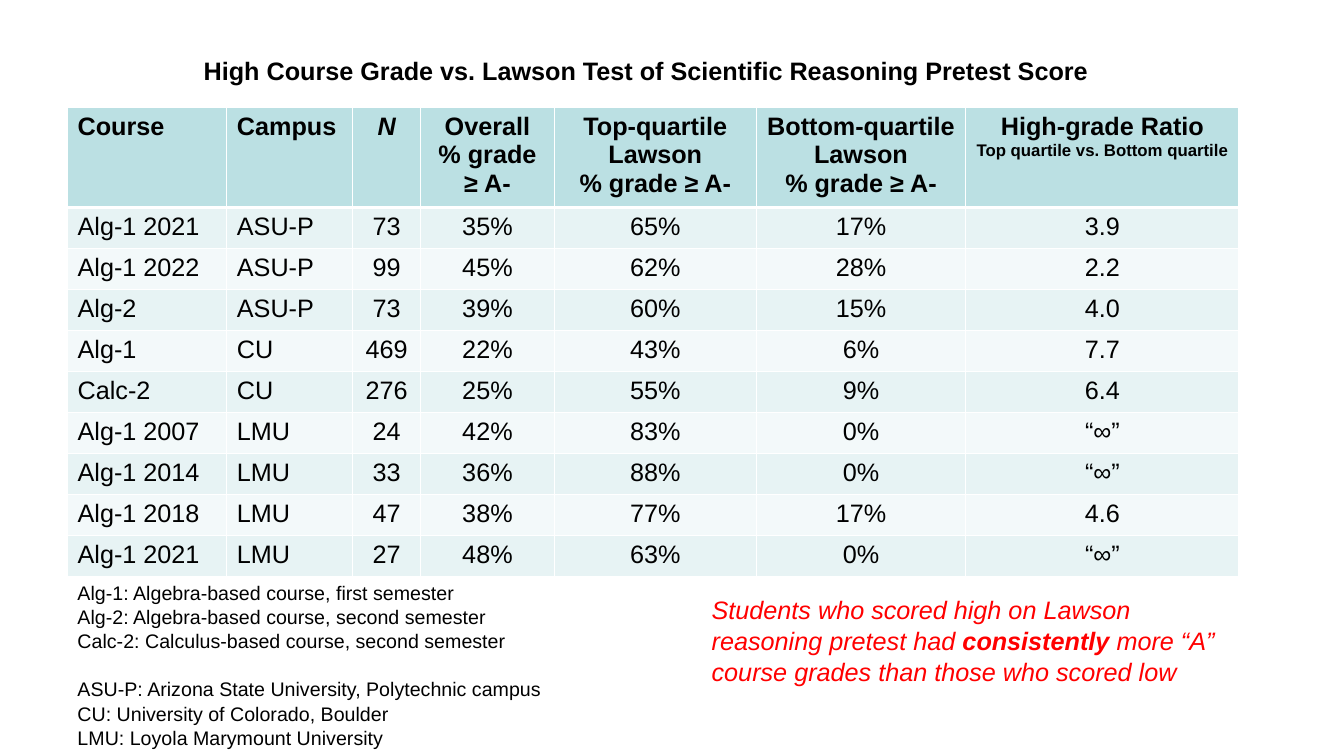
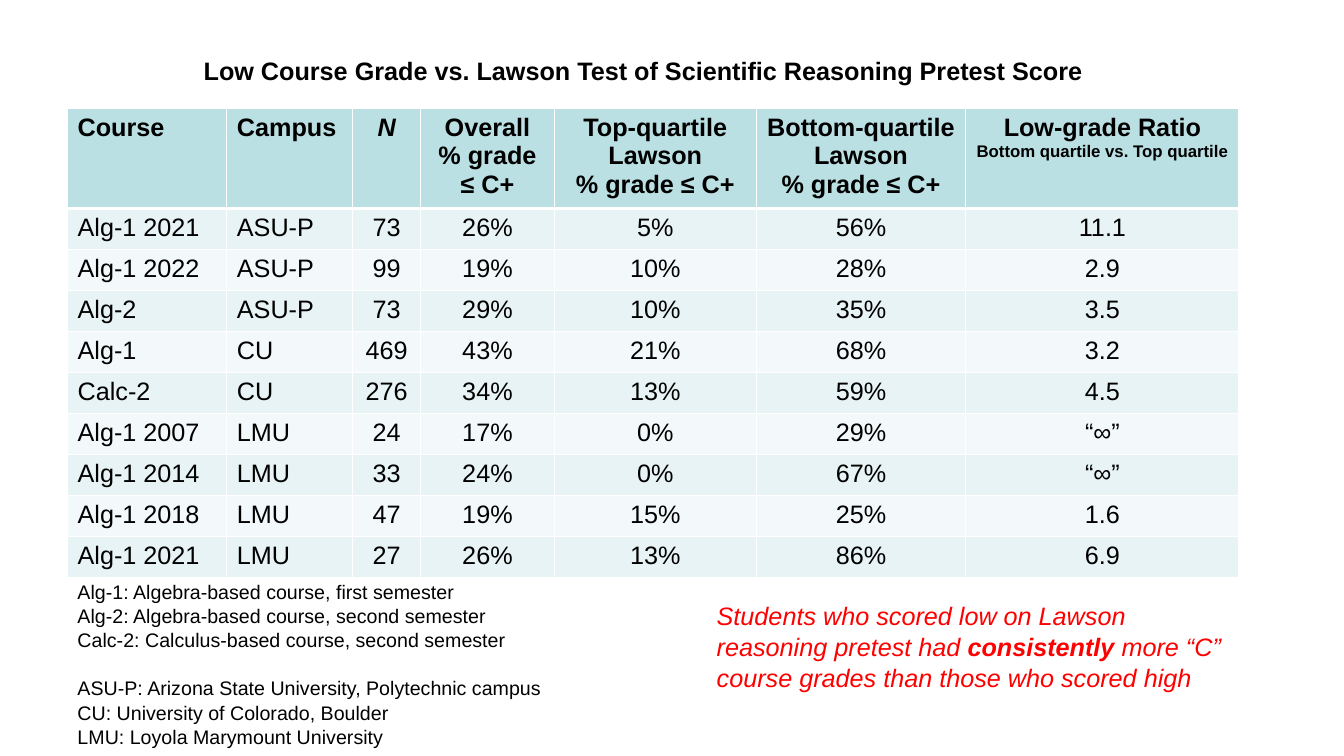
from lxml import etree
from pptx import Presentation
from pptx.dml.color import RGBColor
from pptx.enum import text
from pptx.oxml import ns
from pptx import util as u

BLACK = RGBColor(0x00, 0x00, 0x00)
RED = RGBColor(0xFF, 0x00, 0x00)
WHITE = RGBColor(0xFF, 0xFF, 0xFF)
HEADER = RGBColor(0xBB, 0xE0, 0xE3)
BANDS = (RGBColor(0xF3, 0xF9, 0xFA), RGBColor(0xE7, 0xF3, 0xF4))

FONT = "Arial"
BODY = {"size": u.Pt(18), "bold": False}
HEAD = {"size": u.Pt(18), "bold": True}
SUBHEAD = {"size": u.Pt(12), "bold": True}
NOTE = {"size": u.Pt(14), "bold": False}
CLAIM = {"size": u.Pt(18), "bold": False, "italic": True}

LEFT = 0.67
COL_WIDTHS = (1.58, 1.25, 0.67, 1.33, 2, 2.08, 2.71)
TABLE_HEIGHT = 4.65
HEAD_HEIGHT = 0.99
LINE_SPACING = 1.04

COURSES = (
    ("Alg-1 2021", "ASU-P", "73"),
    ("Alg-1 2022", "ASU-P", "99"),
    ("Alg-2", "ASU-P", "73"),
    ("Alg-1", "CU", "469"),
    ("Calc-2", "CU", "276"),
    ("Alg-1 2007", "LMU", "24"),
    ("Alg-1 2014", "LMU", "33"),
    ("Alg-1 2018", "LMU", "47"),
    ("Alg-1 2021", "LMU", "27"),
)

COURSE_KEY = (
    "Alg-1: Algebra-based course, first semester",
    "Alg-2: Algebra-based course, second semester",
    "Calc-2: Calculus-based course, second semester",
)
CAMPUS_KEY = (
    "ASU-P: Arizona State University, Polytechnic campus",
    "CU: University of Colorado, Boulder",
    "LMU: Loyola Marymount University",
)

SLIDES = (
    {
        "level": "High",
        "cutoff": "≥ A-",
        "comparison": "Top quartile vs. Bottom quartile",
        "results": (
            ("35%", "65%", "17%", "3.9"),
            ("45%", "62%", "28%", "2.2"),
            ("39%", "60%", "15%", "4.0"),
            ("22%", "43%", "6%", "7.7"),
            ("25%", "55%", "9%", "6.4"),
            ("42%", "83%", "0%", "“∞”"),
            ("36%", "88%", "0%", "“∞”"),
            ("38%", "77%", "17%", "4.6"),
            ("48%", "63%", "0%", "“∞”"),
        ),
        "claim": ("high", "A", "low"),
        "table_top": 1.07,
        "key_top": 5.7,
        "claim_at": (6.96, 5.83),
    },
    {
        "level": "Low",
        "cutoff": "≤ C+",
        "comparison": "Bottom quartile vs. Top quartile",
        "results": (
            ("26%", "5%", "56%", "11.1"),
            ("19%", "10%", "28%", "2.9"),
            ("29%", "10%", "35%", "3.5"),
            ("43%", "21%", "68%", "3.2"),
            ("34%", "13%", "59%", "4.5"),
            ("17%", "0%", "29%", "“∞”"),
            ("24%", "0%", "67%", "“∞”"),
            ("19%", "15%", "25%", "1.6"),
            ("26%", "13%", "86%", "6.9"),
        ),
        "claim": ("low", "C", "high"),
        "table_top": 1.08,
        "key_top": 5.69,
        "claim_at": (7.01, 5.89),
    },
)


class Deck:
    def __init__(self):
        self.prs = Presentation()
        self.prs.slide_width = u.Inches(13.33)
        self.prs.slide_height = u.Inches(7.5)
        self.s = None

    def fill_text(self, tf, paragraphs, color=BLACK, align=text.PP_ALIGN.LEFT):
        for i, runs in enumerate(paragraphs):
            p = tf.add_paragraph() if i else tf.paragraphs[0]
            p.alignment = align
            for words, style in runs:
                r = p.add_run()
                r.text = words
                r.font.name = FONT
                r.font.color.rgb = color
                for key, value in style.items():
                    setattr(r.font, key, value)

    def add_slide(self, title):
        self.s = self.prs.slides.add_slide(self.prs.slide_layouts[5])
        sp = self.s.shapes.title
        sp.left, sp.top = u.Inches(1.92), u.Inches(0.5)
        sp.width, sp.height = u.Inches(9.31), u.Inches(0.4)
        tf = sp.text_frame
        tf.word_wrap = True
        tf.auto_size = text.MSO_AUTO_SIZE.NONE
        tf.vertical_anchor = text.MSO_ANCHOR.TOP
        self.fill_text(tf, [[(title, HEAD)]])

    def add_text(self, x, y, w, h, paragraphs, color=BLACK):
        sp = self.s.shapes.add_textbox(*map(u.Inches, (x, y, w, h)))
        tf = sp.text_frame
        tf.word_wrap = True
        self.fill_text(tf, paragraphs, color)
        for p in tf.paragraphs:
            p.line_spacing = LINE_SPACING
        return tf

    def set_borders(self, cell, top, bottom):
        tc_pr = cell._tc.get_or_add_tcPr()
        for side, width in (("L", 1), ("R", 1), ("T", top), ("B", bottom)):
            ln = etree.SubElement(tc_pr, ns.qn(f"a:ln{side}"), w=str(u.Pt(width)))
            fill = etree.SubElement(ln, ns.qn("a:solidFill"))
            etree.SubElement(fill, ns.qn("a:srgbClr"), val=str(WHITE))

    def add_table(self, top, rows):
        body_height = (TABLE_HEIGHT - HEAD_HEIGHT) / (len(rows) - 1)
        frame = self.s.shapes.add_table(
            len(rows), len(COL_WIDTHS), u.Inches(LEFT), u.Inches(top),
            u.Inches(sum(COL_WIDTHS)), u.Inches(TABLE_HEIGHT))
        table = frame.table
        for column, width in zip(table.columns, COL_WIDTHS):
            column.width = u.Inches(width)
        for i, row in enumerate(rows):
            table.rows[i].height = u.Inches(body_height if i else HEAD_HEIGHT)
            for j, paragraphs in enumerate(row):
                cell = table.cell(i, j)
                self.set_borders(cell, 3 if i == 1 else 1, 1 if i else 3)
                cell.fill.solid()
                cell.fill.fore_color.rgb = BANDS[i % 2] if i else HEADER
                align = text.PP_ALIGN.LEFT if j < 2 else text.PP_ALIGN.CENTER
                self.fill_text(cell.text_frame, paragraphs, align=align)

    def add_key(self, top):
        lines = [[(line, NOTE)] for line in COURSE_KEY + CAMPUS_KEY]
        tf = self.add_text(LEFT, top, 6.25, 1.75, lines)
        tf.paragraphs[len(COURSE_KEY)].space_before = u.Pt(16.7)

    def add_claim(self, at, scored, grade, others):
        runs = [
            (f"Students who scored {scored} on Lawson reasoning pretest had ", CLAIM),
            ("consistently", {**CLAIM, "bold": True}),
            (f" more “{grade}” course grades than those who scored {others}", CLAIM),
        ]
        self.add_text(*at, 5.29, 1.01, [runs], RED)


def header_row(level, cutoff, comparison):
    grade = [(f"% grade {cutoff}", HEAD)]
    return [
        [[("Course", HEAD)]],
        [[("Campus", HEAD)]],
        [[("N", {**HEAD, "italic": True})]],
        [[("Overall", HEAD)], grade],
        [[("Top-quartile Lawson", HEAD)], grade],
        [[("Bottom-quartile Lawson", HEAD)], grade],
        [[(f"{level}-grade Ratio", HEAD)], [(comparison, SUBHEAD)]],
    ]


def main():
    deck = Deck()
    for data in SLIDES:
        level = data["level"]
        deck.add_slide(f"{level} Course Grade vs. Lawson Test of Scientific Reasoning Pretest Score")
        rows = [header_row(level, data["cutoff"], data["comparison"])]
        for course, results in zip(COURSES, data["results"]):
            rows.append([[[(value, BODY)]] for value in course + results])
        deck.add_table(data["table_top"], rows)
        deck.add_key(data["key_top"])
        deck.add_claim(data["claim_at"], *data["claim"])
    deck.prs.save("out.pptx")


if __name__ == "__main__":
    main()
